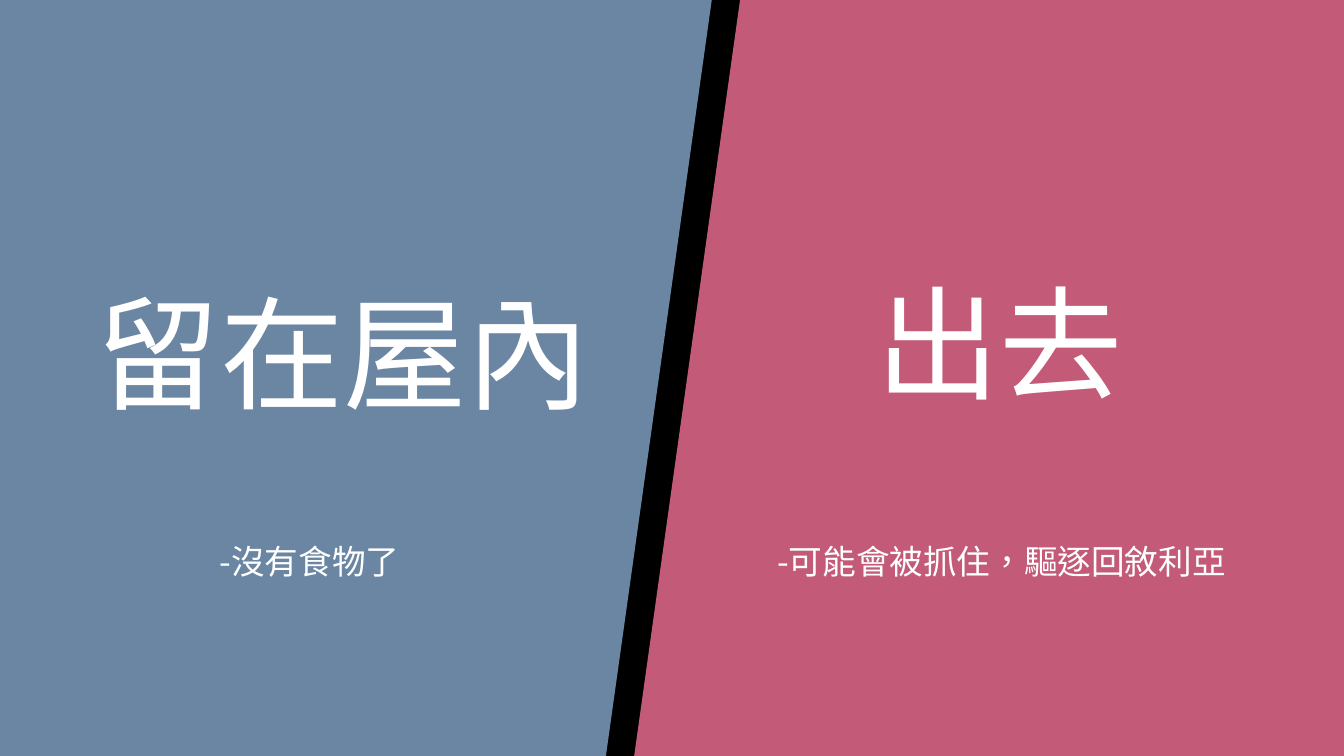
from dataclasses import dataclass

from pptx import Presentation
from pptx.dml.color import RGBColor
from pptx.enum.lang import MSO_LANGUAGE_ID as Language
from pptx.enum.text import MSO_AUTO_SIZE as AutoSize, PP_ALIGN as Align
from pptx.util import Inches, Pt


@dataclass(frozen=True)
class Theme:
    """Colours and type sizes of the slide."""
    background: RGBColor = RGBColor(0x00, 0x00, 0x00)
    stay: RGBColor = RGBColor(0x6B, 0x86, 0xA3)
    leave: RGBColor = RGBColor(0xC3, 0x5A, 0x78)
    text: RGBColor = RGBColor(0xFF, 0xFF, 0xFF)
    choice_size: Pt = Pt(88)
    reason_size: Pt = Pt(24)
    reason_font: str = "Noto Sans CJK JP"


THEME = Theme()


def add_panel(slide, corners, color):
    """Draw a filled panel through the given corners in inches."""
    points = [(Inches(x), Inches(y)) for x, y in corners]
    builder = slide.shapes.build_freeform(*points[0], scale=1.0)
    builder.add_line_segments(points[1:], close=True)
    panel = builder.convert_to_shape()
    panel.shadow.inherit = False
    panel.fill.solid()
    panel.fill.fore_color.rgb = color
    panel.line.fill.background()


def add_text(slide, text, box, size, font_name, alignment):
    """Add one white paragraph in a wrapping text box."""
    frame = slide.shapes.add_textbox(*map(Inches, box)).text_frame
    frame.word_wrap = True
    frame.auto_size = AutoSize.SHAPE_TO_FIT_TEXT
    paragraph = frame.paragraphs[0]
    paragraph.alignment = alignment
    run = paragraph.add_run()
    run.text = text
    run.font.language_id = Language.TRADITIONAL_CHINESE
    paragraph.font.size = size
    paragraph.font.name = font_name
    paragraph.font.color.rgb = THEME.text


def add_choice(slide, text, box, font_name):
    """Add the large centred name of a choice."""
    add_text(slide, text, box, THEME.choice_size, font_name, Align.CENTER)


def add_reason(slide, text, box):
    """Add the small line below a choice."""
    add_text(slide, text, box, THEME.reason_size, THEME.reason_font, Align.LEFT)


def main():
    """Build the slide with two opposing choices."""
    presentation = Presentation()
    presentation.slide_width = Inches(13.33)
    presentation.slide_height = Inches(7.5)
    slide = presentation.slides.add_slide(presentation.slide_layouts[6])
    slide.background.fill.solid()
    slide.background.fill.fore_color.rgb = THEME.background

    add_panel(slide, [(6.01, 7.5), (7.06, 0), (0, 0), (0, 7.5)], THEME.stay)
    add_panel(slide, [(7.34, 0), (6.29, 7.5), (13.33, 7.5), (13.33, 0)], THEME.leave)
    add_choice(slide, "留在屋內", (0.56, 2.7, 5.69, 1.58), "Lato")
    add_choice(slide, "出去", (6.84, 2.6, 6.15, 1.58), "Calibri")
    add_reason(slide, "-沒有食物了", (2.08, 5.32, 3.85, 0.5))
    add_reason(slide, "-可能會被抓住，驅逐回敘利亞", (7.61, 5.32, 4.79, 0.5))
    presentation.save("out.pptx")


if __name__ == "__main__":
    main()
